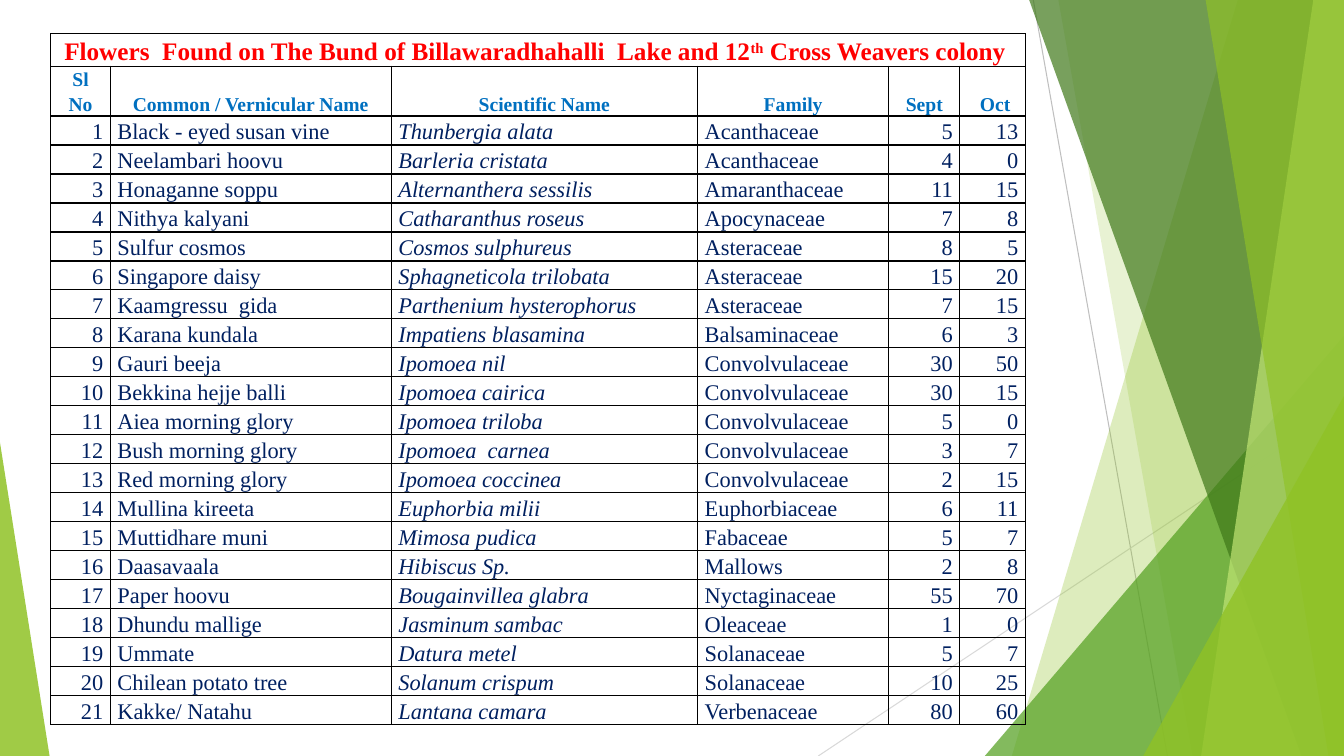
from lxml.etree import SubElement
from pptx import Presentation
from pptx.dml.color import RGBColor
from pptx.enum.shapes import MSO_CONNECTOR, MSO_SHAPE
from pptx.enum.text import MSO_ANCHOR, PP_ALIGN
from pptx.oxml import parse_xml
from pptx.oxml.ns import nsdecls, qn
from pptx.util import Cm, Pt

W, H = 33.87, 19.05
FONT = "Times New Roman"
RED = RGBColor(0xFF, 0x00, 0x00)
BLUE = RGBColor(0x00, 0x70, 0xC0)
NAVY = RGBColor(0x00, 0x20, 0x60)
LIME = RGBColor(0x90, 0xC2, 0x26)
GREEN = RGBColor(0x54, 0xA0, 0x21)
DARK_GREEN = RGBColor(0x3F, 0x78, 0x19)
PALE_GREEN = RGBColor(0xC0, 0xE4, 0x74)
GRAY = RGBColor(0xBF, 0xBF, 0xBF)
LIGHT_GRAY = RGBColor(0xD9, 0xD9, 0xD9)

TITLE = [("Flowers  Found on The Bund of Billawaradhahalli  Lake and 12", False),
         ("th", True), (" Cross Weavers colony ", False)]
HEADERS = ["Sl No", "Common / Vernicular Name", "Scientific Name", "Family", "Sept", " Oct"]
FLOWERS = [
    ("Black - eyed susan vine", "Thunbergia alata", "Acanthaceae", 5, 13),
    ("Neelambari hoovu", "Barleria cristata", "Acanthaceae", 4, 0),
    ("Honaganne soppu", "Alternanthera sessilis", "Amaranthaceae", 11, 15),
    ("Nithya kalyani", "Catharanthus roseus", "Apocynaceae", 7, 8),
    ("Sulfur cosmos", "Cosmos sulphureus", "Asteraceae", 8, 5),
    ("Singapore daisy", "Sphagneticola trilobata", "Asteraceae", 15, 20),
    ("Kaamgressu  gida", "Parthenium hysterophorus", "Asteraceae", 7, 15),
    ("Karana kundala", "Impatiens blasamina", "Balsaminaceae", 6, 3),
    ("Gauri beeja", "Ipomoea nil", "Convolvulaceae", 30, 50),
    ("Bekkina hejje balli", "Ipomoea cairica", "Convolvulaceae", 30, 15),
    ("Aiea morning glory", "Ipomoea triloba", "Convolvulaceae", 5, 0),
    ("Bush morning glory", "Ipomoea  carnea", "Convolvulaceae", 3, 7),
    ("Red morning glory", "Ipomoea coccinea", "Convolvulaceae", 2, 15),
    ("Mullina kireeta", "Euphorbia milii", "Euphorbiaceae", 6, 11),
    ("Muttidhare muni", "Mimosa pudica", "Fabaceae", 5, 7),
    ("Daasavaala", "Hibiscus Sp.", "Mallows", 2, 8),
    ("Paper hoovu", "Bougainvillea glabra", "Nyctaginaceae", 55, 70),
    ("Dhundu mallige", "Jasminum sambac", "Oleaceae", 1, 0),
    ("Ummate", "Datura metel", "Solanaceae", 5, 7),
    ("Chilean potato tree", "Solanum crispum", "Solanaceae", 10, 25),
    ("Kakke/ Natahu", "Lantana camara", "Verbenaceae", 80, 60),
]


def format_cell(cell, align, anchor, size, color, bold=False, italic=False):
    cell.margin_left = cell.margin_right = Cm(0.18)
    cell.margin_top = cell.margin_bottom = Cm(0)
    cell.vertical_anchor = anchor
    p = cell.text_frame.paragraphs[0]
    p.alignment, p.line_spacing = align, 1.15
    p.font.name, p.font.size, p.font.color.rgb = FONT, Pt(size), color
    p.font.bold, p.font.italic = bold, italic


prs = Presentation()
prs.slide_width, prs.slide_height = Cm(W), Cm(H)
s = prs.slides.add_slide(prs.slide_layouts[6])

# Thin background lines
for x1, y1, x2, y2, color in [(26.04, 0, 29.42, H, GRAY), (W, 10.23, 20.62, H, LIGHT_GRAY)]:
    line = s.shapes.add_connector(MSO_CONNECTOR.STRAIGHT, Cm(x1), Cm(y1), Cm(x2), Cm(y2))
    line.line.color.rgb = color
    line.line.width = Pt(0.75)
    SubElement(line._element.spPr, qn("a:effectLst"))

# Green facets: bands (top x, bottom x) and triangles (left, top, width, apex)
for place, color, opacity in [
    ((31.2, 25.5), LIME, 30),
    ((26.67, 30.05), LIME, 20),
    ((24.82, 8.46, 9.05, 1), GREEN, 72),
    ((25.93, 32.8), DARK_GREEN, 70),
    ((33.1, 30.27), PALE_GREEN, 70),
    ((30.38, 33.48), LIME, 65),
    ((28.81, 9.98, 5.06, 1), LIME, 80),
    ((0, 11.15, 1.25, 0), LIME, 85),
]:
    if len(place) == 2:
        top_x, bottom_x = place
        outline = s.shapes.build_freeform(Cm(top_x), Cm(-0.02))
        outline.add_line_segments([(Cm(W), Cm(-0.02)), (Cm(W), Cm(H)), (Cm(bottom_x), Cm(H))])
        facet = outline.convert_to_shape()
    else:
        left, top, width, apex = place
        facet = s.shapes.add_shape(MSO_SHAPE.ISOSCELES_TRIANGLE,
                                   Cm(left), Cm(top), Cm(width), Cm(H - top))
        facet.adjustments[0] = apex
    facet.shadow.inherit = False
    facet.line.fill.background()
    facet.fill.solid()
    facet.fill.fore_color.rgb = color
    srgb = facet._element.spPr.find(".//" + qn("a:srgbClr"))
    SubElement(srgb, qn("a:alpha"), val=str(opacity * 1000))

# Table grid
col_widths = [1.5, 7.08, 7.72, 4.82, 1.79, 1.65]
row_heights = [0.82, 1.21] + [0.73] * len(FLOWERS)
table = s.shapes.add_table(len(row_heights), len(col_widths), Cm(1.28), Cm(0.85),
                           Cm(sum(col_widths)), Cm(sum(row_heights))).table
table.first_row = table.horz_banding = False
for col, width in zip(table.columns, col_widths):
    col.width = Cm(width)
for row, height in zip(table.rows, row_heights):
    row.height = Cm(height)
table.cell(0, 0).merge(table.cell(0, 5))

# Title row
title = table.cell(0, 0)
p = title.text_frame.paragraphs[0]
for text, raised in TITLE:
    r = p.add_run()
    r.text = text
    if raised:
        r.font._element.set("baseline", "30000")
format_cell(title, PP_ALIGN.CENTER, MSO_ANCHOR.MIDDLE, 18, RED, bold=True)

# Header row
for j, header in enumerate(HEADERS):
    cell = table.cell(1, j)
    cell.text = header
    format_cell(cell, PP_ALIGN.CENTER, MSO_ANCHOR.BOTTOM, 14, BLUE, bold=True)

# Flower rows
for i, flower in enumerate(FLOWERS, 1):
    for j, value in enumerate((i, *flower)):
        cell = table.cell(i + 1, j)
        cell.text = str(value)
        align = PP_ALIGN.RIGHT if isinstance(value, int) else PP_ALIGN.LEFT
        format_cell(cell, align, MSO_ANCHOR.TOP, 16, NAVY, italic=j == 2)

# Clear fills and black borders
for cell in table.iter_cells():
    cell.fill.background()
    tcPr = cell._tc.get_or_add_tcPr()
    for k, side in enumerate(("lnL", "lnR", "lnT", "lnB")):
        tcPr.insert(k, parse_xml(
            f'<a:{side} {nsdecls("a")} w="12700"><a:solidFill><a:srgbClr val="000000"/>'
            f'</a:solidFill></a:{side}>'))

prs.save("out.pptx")
